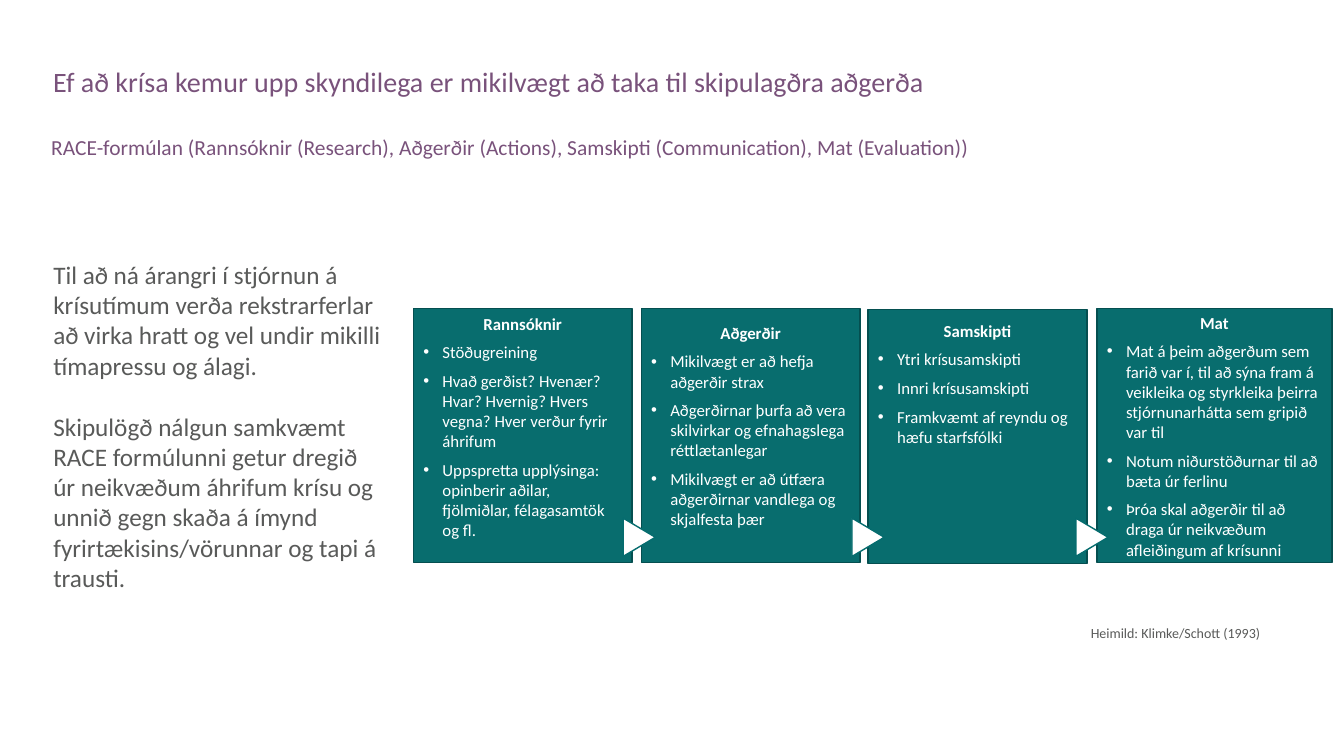
from lxml.etree import SubElement
from pptx import Presentation
from pptx.dml.color import RGBColor
from pptx.enum.shapes import MSO_SHAPE
from pptx.enum.text import MSO_ANCHOR, PP_ALIGN
from pptx.oxml.ns import qn
from pptx.util import Pt

PX = 9144  # 100 px to the inch
FONT = "Calibri"
COLORS = {
    "heading": "79527B",
    "body": "595A59",
    "card": "086D6E",
    "card_line": "054F50",
    "arrow_line": "056C6E",
    "white": "FFFFFF",
}

INTRODUCTION = [
    "Til að ná árangri í stjórnun á krísutímum verða rekstrarferlar að virka "
    "hratt og vel undir mikilli tímapressu og álagi.",
    "Skipulögð nálgun samkvæmt RACE formúlunni getur dregið úr neikvæðum "
    "áhrifum krísu og unnið gegn skaða á ímynd fyrirtækisins/vörunnar og "
    "tapi á trausti.",
]

# Left, top, width, space above the text, heading, bullet points
CARDS = [
    (410, 306, 217, 5, "Rannsóknir", [
        "Stöðugreining",
        "Hvað gerðist? Hvenær? Hvar? Hvernig? Hvers vegna? Hver verður fyrir áhrifum",
        "Uppspretta upplýsinga: opinberir aðilar, fjölmiðlar, félagasamtök og fl.",
    ]),
    (636, 306, 217, 14, "Aðgerðir", [
        "Mikilvægt er að hefja aðgerðir strax",
        "Aðgerðirnar þurfa að vera skilvirkar og efnahagslega réttlætanlegar",
        "Mikilvægt er að útfæra aðgerðirnar vandlega og skjalfesta þær",
    ]),
    (861, 307, 217, 11, "Samskipti", [
        "Ytri krísusamskipti",
        "Innri krísusamskipti",
        "Framkvæmt af reyndu og hæfu starfsfólki",
    ]),
    (1088, 306, 233, 4, "Mat", [
        "Mat á þeim aðgerðum sem farið var í, til að sýna fram á veikleika og "
        "styrkleika þeirra stjórnunarhátta sem gripið var til",
        "Notum niðurstöðurnar til að bæta úr ferlinu",
        "Þróa skal aðgerðir til að draga úr neikvæðum afleiðingum af krísunni",
    ]),
]
ARROW_LEFTS = [615, 842, 1064]


class SlideBuilder:
    def __init__(self, presentation):
        self.slide = presentation.slides.add_slide(presentation.slide_layouts[6])

    def color(self, name):
        return RGBColor.from_string(COLORS[name])

    def style(self, paragraph, size, color, bold=False):
        font = paragraph.font
        font.name, font.size, font.bold = FONT, Pt(size), bold
        font.color.rgb = self.color(color)

    def frame(self, shape, anchor, top=5):
        text_frame = shape.text_frame
        text_frame.word_wrap = True
        text_frame.vertical_anchor = anchor
        text_frame.margin_left = text_frame.margin_right = 10 * PX
        text_frame.margin_top, text_frame.margin_bottom = top * PX, 5 * PX
        return text_frame

    def text(self, box, paragraphs, size, color, anchor=MSO_ANCHOR.TOP,
             line_spacing=None, gap=0):
        shape = self.slide.shapes.add_textbox(*(value * PX for value in box))
        text_frame = self.frame(shape, anchor)
        text_frame.text = "\n".join(paragraphs)
        for index, paragraph in enumerate(text_frame.paragraphs):
            self.style(paragraph, size, color)
            if line_spacing:
                paragraph.line_spacing = line_spacing
            if index:
                paragraph.space_before = Pt(gap)

    def shape(self, kind, box, fill, line):
        shape = self.slide.shapes.add_shape(kind, *(value * PX for value in box))
        shape.shadow.inherit = False
        shape.fill.solid()
        shape.fill.fore_color.rgb = self.color(fill)
        shape.line.color.rgb = self.color(line)
        shape.line.width = Pt(1)
        return shape

    def bullet(self, paragraph):
        properties = paragraph._p.get_or_add_pPr()
        properties.set("marL", str(19 * PX))
        properties.set("indent", str(-19 * PX))
        bullet_color = SubElement(properties, qn("a:buClr"))
        SubElement(bullet_color, qn("a:srgbClr"), val=COLORS["white"])
        SubElement(properties, qn("a:buFont"), typeface="Arial")
        SubElement(properties, qn("a:buChar"), char="•")

    def card(self, left, top, width, text_top, heading, points):
        shape = self.shape(MSO_SHAPE.RECTANGLE, (left, top, width, 252),
                           "card", "card_line")
        text_frame = self.frame(shape, MSO_ANCHOR.TOP, text_top)
        text_frame.text = "\n".join([heading, *points])
        title, *items = text_frame.paragraphs
        title.alignment = PP_ALIGN.CENTER
        self.style(title, 12, "white", bold=True)
        for paragraph in items:
            self.bullet(paragraph)
            paragraph.alignment = PP_ALIGN.LEFT
            paragraph.space_before = Pt(6)
            self.style(paragraph, 12, "white")

    def arrow(self, left):
        shape = self.shape(MSO_SHAPE.FLOWCHART_EXTRACT, (left, 517, 38, 32),
                           "white", "arrow_line")
        shape.rotation = 90


def main():
    presentation = Presentation()
    presentation.slide_width = 1333 * PX
    presentation.slide_height = 750 * PX
    builder = SlideBuilder(presentation)

    # Headings and introduction
    builder.text((43, 63, 1254, 64),
                 ["Ef að krísa kemur upp skyndilega er mikilvægt að taka til "
                  "skipulagðra aðgerða"],
                 20, "heading", line_spacing=0.9)
    builder.text((41, 135, 1256, 28),
                 ["RACE-formúlan (Rannsóknir (Research), Aðgerðir (Actions), "
                  "Samskipti (Communication), Mat (Evaluation))"],
                 15.3, "heading", line_spacing=0.7)
    builder.text((43, 179, 349, 487), INTRODUCTION, 18, "body",
                 anchor=MSO_ANCHOR.MIDDLE, gap=22)

    # The four steps and the arrows between them
    for card in CARDS:
        builder.card(*card)
    for left in ARROW_LEFTS:
        builder.arrow(left)

    # Source
    builder.text((1072, 615, 225, 27), ["Heimild: Klimke/Schott (1993)"], 10, "body")

    presentation.save("out.pptx")


if __name__ == "__main__":
    main()
